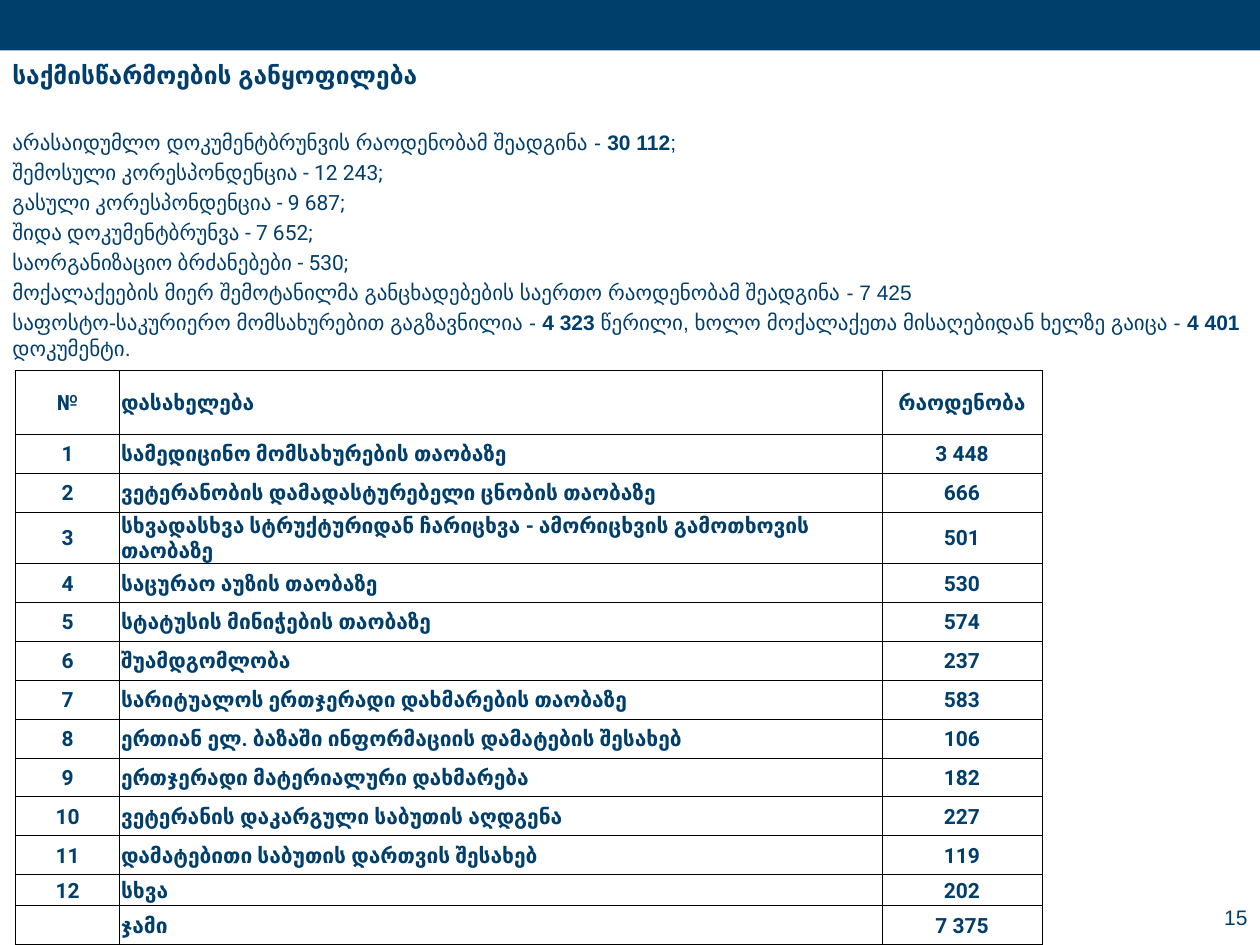
from lxml.etree import SubElement
from pptx import Presentation
from pptx.dml.color import RGBColor
from pptx.enum.shapes import MSO_SHAPE
from pptx.enum.text import MSO_ANCHOR, PP_ALIGN
from pptx.oxml.ns import qn
from pptx.util import Pt

HUES = {"navy": "003E6C", "line": "000000"}

TITLE = "საქმისწარმოების განყოფილება"
LINES = [
    ("Arial", ["არასაიდუმლო დოკუმენტბრუნვის რაოდენობამ შეადგინა - ", "30 112", ";"]),
    ("Roboto", ["შემოსული კორესპონდენცია - 12 243;"]),
    ("Roboto", ["გასული კორესპონდენცია - 9 687;"]),
    ("Roboto", ["შიდა დოკუმენტბრუნვა - 7 652;"]),
    ("Roboto", ["საორგანიზაციო ბრძანებები - 530;"]),
    ("Arial", ["მოქალაქეების მიერ შემოტანილმა განცხადებების საერთო რაოდენობამ შეადგინა - 7 425"]),
    ("Arial", ["საფოსტო-საკურიერო მომსახურებით გაგზავნილია - ", "4 323",
               " წერილი, ხოლო მოქალაქეთა მისაღებიდან ხელზე გაიცა - ", "4 401",
               " დოკუმენტი."]),
]
HEAD = ("№", "დასახელება", "რაოდენობა")
ITEMS = [
    ("სამედიცინო მომსახურების თაობაზე", "3 448"),
    ("ვეტერანობის დამადასტურებელი ცნობის თაობაზე", "666"),
    ("სხვადასხვა სტრუქტურიდან ჩარიცხვა - ამორიცხვის გამოთხოვის თაობაზე", "501"),
    ("საცურაო აუზის თაობაზე", "530"),
    ("სტატუსის მინიჭების თაობაზე", "574"),
    ("შუამდგომლობა", "237"),
    ("სარიტუალოს ერთჯერადი დახმარების თაობაზე", "583"),
    ("ერთიან ელ. ბაზაში ინფორმაციის დამატების შესახებ", "106"),
    ("ერთჯერადი მატერიალური დახმარება", "182"),
    ("ვეტერანის დაკარგული საბუთის აღდგენა", "227"),
    ("დამატებითი საბუთის დართვის შესახებ", "119"),
    ("სხვა", "202"),
]
TOTAL = ("", "ჯამი", "7 375")
WIDTHS = (59.8, 435.5, 91.5)
ROW = 22.2
TALL = {0: 36.6, 3: 29.1, 12: 17.9}


def style(para, face, size, bold=None):
    font = para.font
    font.name, font.size, font.bold = face, Pt(size), bold
    font.color.rgb = RGBColor.from_string(HUES["navy"])


def add_band(slide, left, top, width, height):
    band = slide.shapes.add_shape(
        MSO_SHAPE.RECTANGLE, Pt(left), Pt(top), Pt(width), Pt(height))
    band.shadow.inherit = False
    band.fill.solid()
    band.fill.fore_color.rgb = RGBColor.from_string(HUES["navy"])
    band.line.fill.background()


def add_body(slide, left, top, width, height):
    frame = slide.shapes.add_textbox(
        Pt(left), Pt(top), Pt(width), Pt(height)).text_frame
    frame.word_wrap = True
    title = frame.paragraphs[0]
    title.add_run().text = TITLE
    style(title, "Arial", 14, True)
    for index, (face, parts) in enumerate(LINES):
        para = frame.add_paragraph()
        para.space_before = Pt(2.8 if index else 22.5)
        style(para, face, 12)
        for place, part in enumerate(parts):
            run = para.add_run()
            run.text = part
            run.font.bold = place % 2 == 1


def add_edges(cell):
    props = cell._tc.get_or_add_tcPr()
    for index, side in enumerate(("lnL", "lnR", "lnT", "lnB")):
        edge = props.makeelement(qn(f"a:{side}"), {"w": str(Pt(0.5))})
        fill = SubElement(edge, qn("a:solidFill"))
        SubElement(fill, qn("a:srgbClr"), val=HUES["line"])
        props.insert(index, edge)


def fill_cell(cell, text, align):
    cell.fill.background()
    add_edges(cell)
    cell.vertical_anchor = MSO_ANCHOR.MIDDLE
    cell.margin_left = cell.margin_right = cell.margin_top = Pt(0.7)
    cell.margin_bottom = Pt(0)
    para = cell.text_frame.paragraphs[0]
    para.alignment = align
    style(para, "Roboto", 12, True)
    if text:
        para.add_run().text = text


def add_grid(slide, left, top):
    rows = [HEAD]
    rows += [(str(num), *item) for num, item in enumerate(ITEMS, 1)]
    rows.append(TOTAL)
    highs = [TALL.get(index, ROW) for index in range(len(rows))]
    table = slide.shapes.add_table(
        len(rows), len(WIDTHS), Pt(left), Pt(top),
        Pt(sum(WIDTHS)), Pt(sum(highs))).table
    table.first_row = table.horz_banding = False
    for column, width in zip(table.columns, WIDTHS):
        column.width = Pt(width)
    for index, (row, high) in enumerate(zip(rows, highs)):
        table.rows[index].height = Pt(high)
        for place, text in enumerate(row):
            align = PP_ALIGN.LEFT if place == 1 else PP_ALIGN.CENTER
            fill_cell(table.cell(index, place), text, align)


def add_number(slide, left, top, width, height):
    frame = slide.shapes.add_textbox(
        Pt(left), Pt(top), Pt(width), Pt(height)).text_frame
    frame.word_wrap = True
    frame.vertical_anchor = MSO_ANCHOR.MIDDLE
    para = frame.paragraphs[0]
    para.alignment = PP_ALIGN.RIGHT
    para.add_run().text = "15"
    style(para, "Arial", 12)


def main():
    deck = Presentation()
    deck.slide_width, deck.slide_height = Pt(720), Pt(540)
    slide = deck.slides.add_slide(deck.slide_layouts[6])
    add_band(slide, 0, 0, 720, 28.8)
    add_body(slide, 0, 31, 720, 509)
    add_grid(slide, 8.7, 211.7)
    add_number(slide, 635.8, 511.2, 84.2, 25.9)
    deck.save("out.pptx")


if __name__ == "__main__":
    main()
